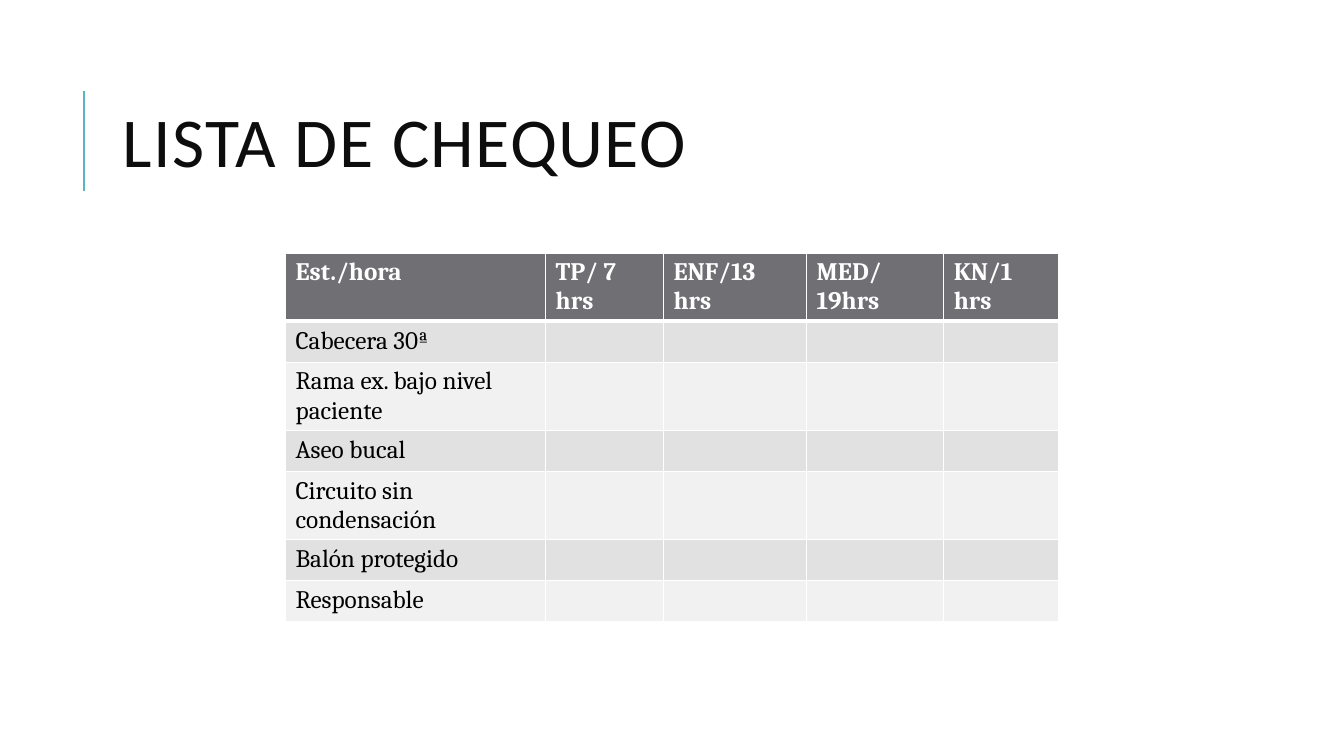
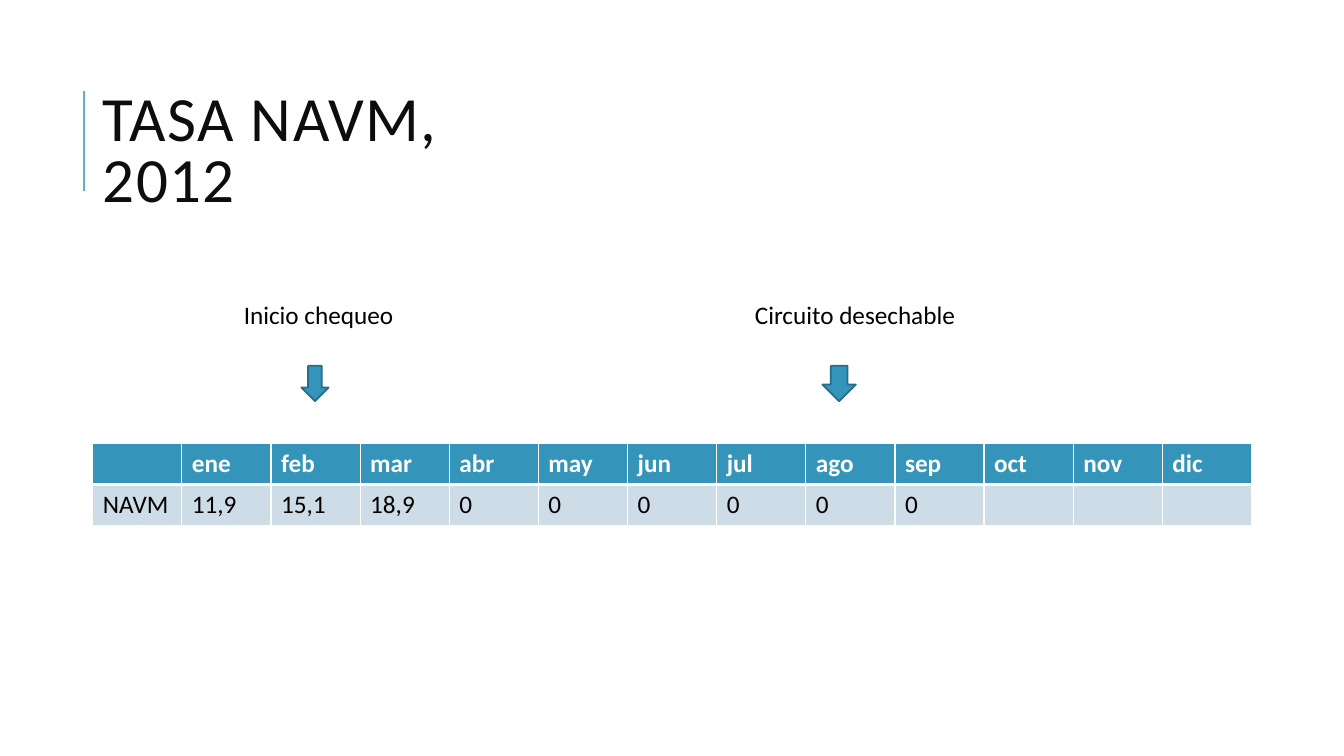
from dataclasses import dataclass

from lxml.etree import SubElement
from pptx import Presentation
from pptx.dml.color import RGBColor as RGB
from pptx.enum.shapes import MSO_CONNECTOR as CONN, MSO_SHAPE as SHAPE
from pptx.enum.text import MSO_ANCHOR as ANCHOR, MSO_AUTO_SIZE as FIT, PP_ALIGN as ALIGN
from pptx.oxml.ns import qn
from pptx.util import Emu, Inches, Pt

W, H = Inches(13.333), Inches(7.5)
TITLE_ONLY = 5
ROW = 5.41  # table row height, percent of slide height
COLORS = {
    "accent": "58B6C0", "title": "0D0D0D", "text": "000000", "white": "FFFFFF",
    "gray": "6F6F74", "gray_dark": "E1E1E2", "gray_light": "F1F1F2",
    "blue": "3494BA", "blue_light": "CEDCE7", "blue_line": "266D8A",
}


@dataclass(frozen=True)
class Box:
    """Left, top, width and height as percentages of the slide."""
    left: float
    top: float
    width: float
    height: float

    def emu(self) -> tuple:
        return x(self.left), y(self.top), x(self.width), y(self.height)


@dataclass(frozen=True)
class TableStyle:
    font: str
    header: str
    bands: tuple


@dataclass(frozen=True)
class Milestone:
    text: str
    label: Box
    arrow: Box


def x(share: float) -> Emu:
    return Emu(round(W * share / 100))


def y(share: float) -> Emu:
    return Emu(round(H * share / 100))


def rgb(name: str) -> RGB:
    return RGB.from_string(COLORS[name])


def write(tf, text: str, *, size=18, font="Calibri", color="text",
          bold=False, spacing=0, line=None):
    """Fill a text frame with one formatted, left-aligned paragraph."""
    tf.word_wrap = True
    p = tf.paragraphs[0]
    p.alignment = ALIGN.LEFT
    if line:
        p.line_spacing = line
    r = p.add_run()
    r.text = text
    r.font.size, r.font.name, r.font.bold = Pt(size), font, bold
    r.font.color.rgb = rgb(color)
    if spacing:
        r._r.get_or_add_rPr().set("spc", str(spacing * 100))


def add_titled_slide(prs, title: str, box: Box, size: int):
    s = prs.slides.add_slide(prs.slide_layouts[TITLE_ONLY])
    # Title
    sp = s.shapes.title
    sp.left, sp.top, sp.width, sp.height = box.emu()
    tf = sp.text_frame
    tf.auto_size = FIT.NONE
    tf.vertical_anchor = ANCHOR.MIDDLE
    write(tf, title, size=size, color="title", spacing=1, line=0.8)
    # Accent rule beside the title
    rule = s.shapes.add_connector(CONN.STRAIGHT, x(6.25), y(25.33), x(6.25), y(12))
    rule.line.color.rgb = rgb("accent")
    rule.line.width = Pt(1.5)
    SubElement(rule._element.spPr, qn("a:effectLst"))
    return s


def set_borders(cell, **widths: float):
    """Draw white cell borders; they must precede the fill in the XML."""
    tc_pr = cell._tc.get_or_add_tcPr()
    for i, (side, width) in enumerate(widths.items()):
        ln = SubElement(tc_pr, qn(f"a:ln{side}"), w=str(Pt(width)))
        fill = SubElement(ln, qn("a:solidFill"))
        SubElement(fill, qn("a:srgbClr"), val=COLORS["white"])
        tc_pr.insert(i, ln)


def add_grid(s, left: float, top: float, cols: list, rows: list, style: TableStyle):
    """Add a table with a header row; short rows leave empty cells."""
    box = Box(left, top, sum(cols), ROW * len(rows))
    table = s.shapes.add_table(len(rows), len(cols), *box.emu()).table
    table.horz_banding = False
    for col, width in zip(table.columns, cols):
        col.width = x(width)
    for i, values in enumerate(rows):
        table.rows[i].height = y(ROW)
        head = i == 0
        fill = style.header if head else style.bands[(i - 1) % len(style.bands)]
        for j in range(len(cols)):
            cell = table.cell(i, j)
            cell.fill.solid()
            cell.fill.fore_color.rgb = rgb(fill)
            set_borders(cell, L=1, R=1, T=3 if i == 1 else 1, B=3 if head else 1)
            if j < len(values) and values[j]:
                write(cell.text_frame, values[j], font=style.font, bold=head,
                      color="white" if head else "text")


def add_milestone(s, m: Milestone):
    label = s.shapes.add_textbox(*m.label.emu())
    write(label.text_frame, m.text)
    arrow = s.shapes.add_shape(SHAPE.DOWN_ARROW, *m.arrow.emu())
    arrow.shadow.inherit = False
    arrow.fill.solid()
    arrow.fill.fore_color.rgb = rgb("blue")
    arrow.line.color.rgb = rgb("blue_line")
    arrow.line.width = Pt(1.25)


def build_checklist(prs):
    s = add_titled_slide(prs, "LISTA DE CHEQUEO", Box(8.4, 8.53, 79.73, 21.87), 50)
    header = ["Est./hora", "TP/ 7 hrs", "ENF/13 hrs", "MED/19hrs", "KN/1 hrs"]
    checks = ["Cabecera 30ª", "Rama ex. bajo nivel paciente", "Aseo bucal",
              "Circuito sin condensación", "Balón protegido", "Responsable"]
    add_grid(s, 21.25, 33.47, [19.35, 8.77, 10.65, 10.2, 8.55],
             [header] + [[check] for check in checks],
             TableStyle("Cambria", "gray", ("gray_dark", "gray_light")))


def build_rates(prs):
    s = add_titled_slide(prs, "TASA NAVM, 2012", Box(6.9, 16, 37.05, 8.67), 45)
    # Monthly rates
    months = ["ene", "feb", "mar", "abr", "may", "jun",
              "jul", "ago", "sep", "oct", "nov", "dic"]
    rates = ["11,9", "15,1", "18,9"] + ["0"] * 6
    n = len(months) + 1
    add_grid(s, 6.9, 58.67, [86.25 / n] * n, [[""] + months, ["NAVM"] + rates],
             TableStyle("Calibri", "blue", ("blue_light",)))
    # Milestones above the months
    for m in (
        Milestone("Inicio chequeo", Box(17.4, 38.93, 16, 5.33),
                  Box(22.42, 48.4, 2.03, 4.67)),
        Milestone("Circuito desechable", Box(55.43, 38.93, 16.8, 5.33),
                  Box(61.2, 48.4, 2.48, 4.67)),
    ):
        add_milestone(s, m)


def main():
    prs = Presentation()
    prs.slide_width, prs.slide_height = W, H
    build_checklist(prs)
    build_rates(prs)
    prs.save("out.pptx")


if __name__ == "__main__":
    main()
